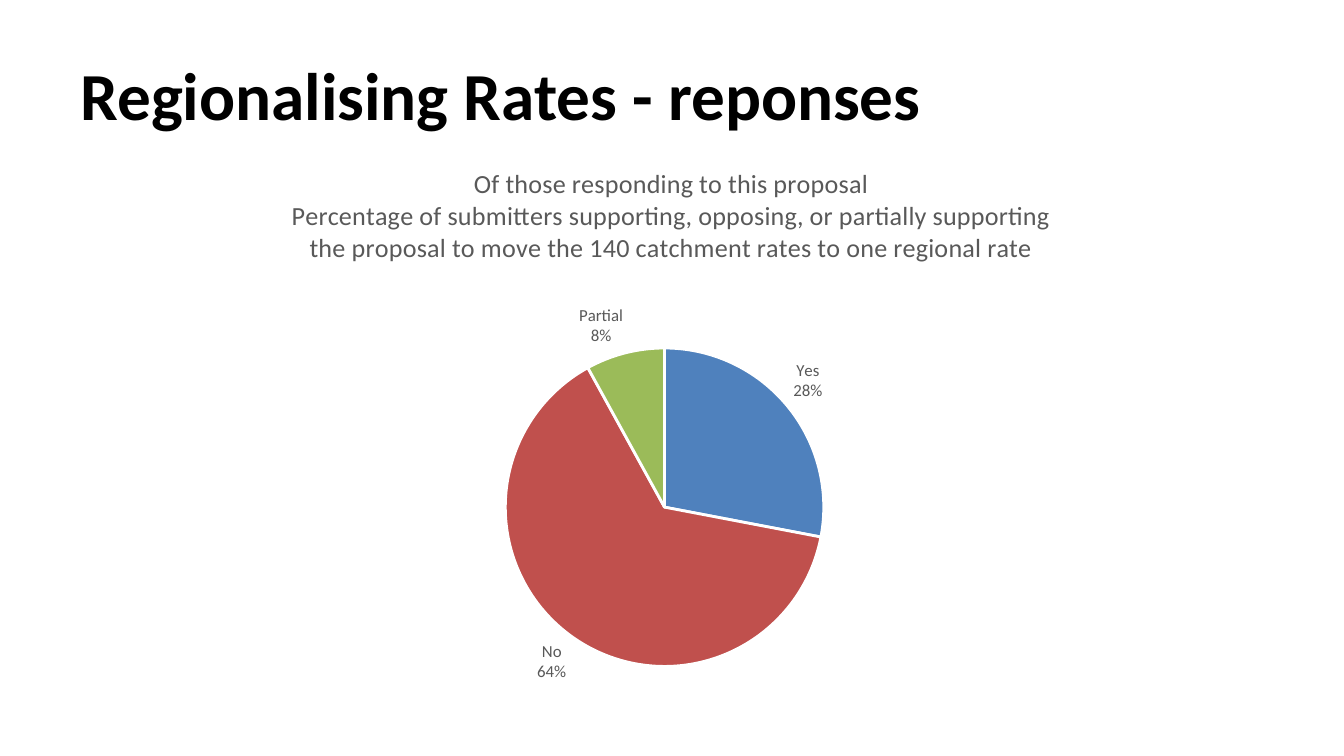
from lxml import etree
from pptx import Presentation
from pptx.chart.data import CategoryChartData
from pptx.dml.color import RGBColor
from pptx.enum.chart import XL_CHART_TYPE as ChartType, XL_LABEL_POSITION as LabelPos
from pptx.enum.text import MSO_ANCHOR as Anchor, PP_ALIGN as Align
from pptx.oxml.ns import qn
from pptx.util import Inches, Pt

# Content
HEADING = "Regionalising Rates - reponses"
CHART_TITLE = [
    "Of those responding to this proposal",
    "Percentage of submitters supporting, opposing, or partially supporting "
    "the proposal to move the 140 catchment rates to one regional rate",
]
RESPONSES = [("Yes", 28, "blue"), ("No", 64, "red"), ("Partial", 8, "green")]

FONT = "Calibri"
COLORS = {
    "black": "000000", "grey": "595959", "white": "FFFFFF",
    "blue": "4F81BD", "red": "C0504D", "green": "9BBB59",
}
PAGE_WIDTH = 10
CHART_BOX = (1.38, 1.16, 7.23, 4.15)
TITLE_LEFT, TITLE_TOP = 2.14, 1.2
PIE_LEFT, PIE_TOP, PIE_SIZE = 3.76, 2.59, 2.37


def color(name):
    return RGBColor.from_string(COLORS[name])


def style_font(font, size, tint, bold=False):
    font.name, font.size, font.bold = FONT, Pt(size), bold
    font.color.rgb = color(tint)


def write_text(frame, lines, size, tint="black", bold=False, align=Align.LEFT):
    for index, line in enumerate(lines):
        para = frame.add_paragraph() if index else frame.paragraphs[0]
        para.alignment = align
        span = para.add_run()
        span.text = line
        style_font(span.font, size, tint, bold)


def place_in_chart(layout, x, y, size=None):
    """Pin a chart part, given in page inches, as fractions of the chart area."""
    left, top, width, height = CHART_BOX
    settings = [("layoutTarget", "inner")] if size else []
    settings += [("xMode", "edge"), ("yMode", "edge"),
                 ("x", (x - left) / width), ("y", (y - top) / height)]
    if size:
        settings += [("w", size / width), ("h", size / height)]
    manual = etree.SubElement(layout, qn("c:manualLayout"))
    for tag, value in settings:
        etree.SubElement(manual, qn(f"c:{tag}")).set("val", str(value))


deck = Presentation()
deck.slide_width = Inches(PAGE_WIDTH)
deck.slide_height = Inches(PAGE_WIDTH * 9 / 16)
page = deck.slides.add_slide(deck.slide_layouts[6])

# Heading
box = page.shapes.add_textbox(*map(Inches, (0.5, 0.23, 7.42, 0.94)))
box.text_frame.word_wrap = True
box.text_frame.vertical_anchor = Anchor.MIDDLE
write_text(box.text_frame, [HEADING], size=36, bold=True)

# Pie chart
data = CategoryChartData()
data.categories = [answer for answer, _, _ in RESPONSES]
data.add_series("Series 1", [share for _, share, _ in RESPONSES])
chart = page.shapes.add_chart(ChartType.PIE, *map(Inches, CHART_BOX), data).chart
style_font(chart.font, 10, "black")
chart.has_legend = False
chart.has_title = True
write_text(chart.chart_title.text_frame, CHART_TITLE, size=14, tint="grey",
           align=Align.CENTER)

# Slices
plot = chart.plots[0]
plot.vary_by_categories = True
for index, (_, _, tint) in enumerate(RESPONSES):
    look = plot.series[0].points[index].format
    look.fill.solid()
    look.fill.fore_color.rgb = color(tint)
    look.line.color.rgb = color("white")
    look.line.width = Pt(1.5)

# Slice labels
plot.has_data_labels = True
labels = plot.data_labels
labels.show_category_name = labels.show_percentage = True
labels.show_value = False
labels.number_format, labels.number_format_is_linked = "0%", False
labels.position = LabelPos.OUTSIDE_END
style_font(labels.font, 9, "grey")
separator = etree.Element(qn("c:separator"))
separator.text = "\n"
labels._element.find(qn("c:showBubbleSize")).addnext(separator)

# Positions of the chart title and the pie
title = chart.chart_title._element
title_layout = title.find(qn("c:layout"))
if title_layout is None:
    title_layout = etree.Element(qn("c:layout"))
    title.find(qn("c:tx")).addnext(title_layout)
place_in_chart(title_layout, TITLE_LEFT, TITLE_TOP)

plot_area = plot._element.getparent()
pie_layout = plot_area.find(qn("c:layout"))
if pie_layout is None:
    pie_layout = etree.Element(qn("c:layout"))
    plot_area.insert(0, pie_layout)
place_in_chart(pie_layout, PIE_LEFT, PIE_TOP, PIE_SIZE)

deck.save("out.pptx")
